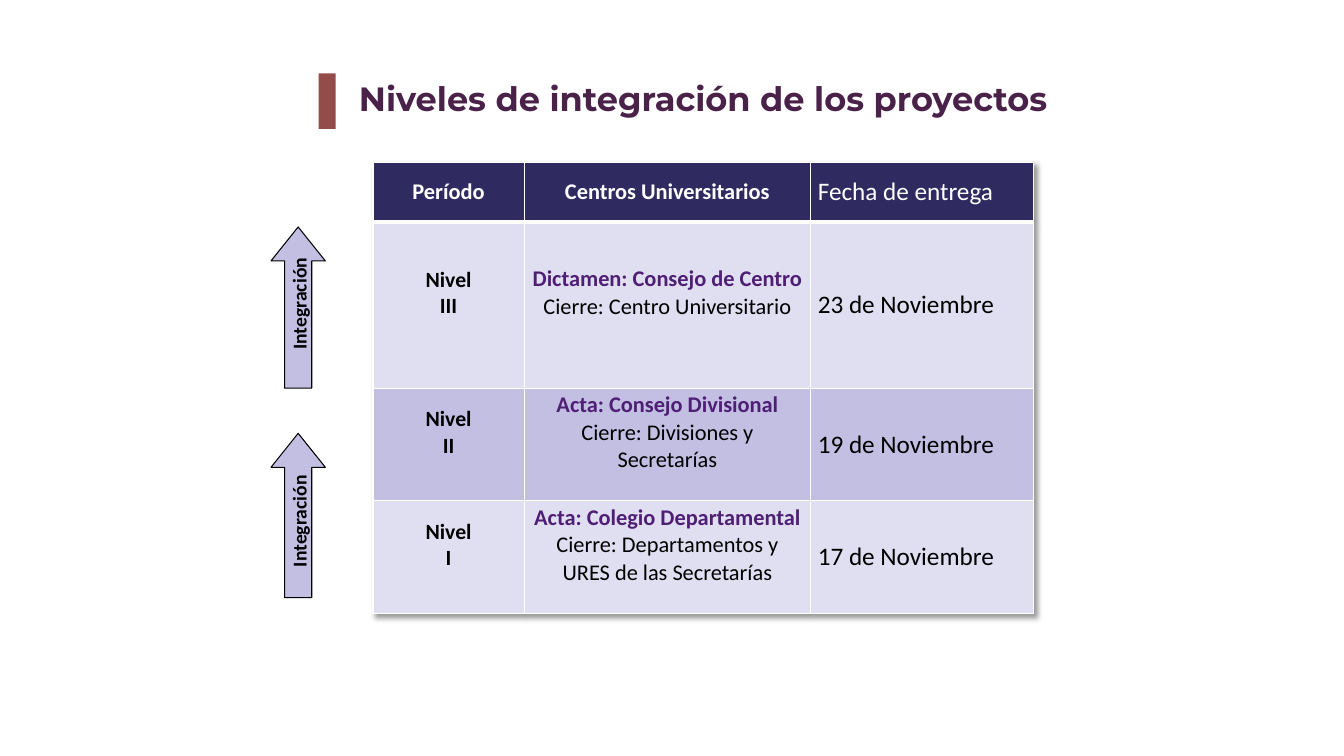
"""Builds the slide on the integration levels of the projects."""
import lxml.etree
import pptx
import pptx.dml.color
import pptx.enum.shapes
import pptx.enum.text
import pptx.oxml
import pptx.oxml.ns
import pptx.util

Cm = pptx.util.Cm
Pt = pptx.util.Pt
RGBColor = pptx.dml.color.RGBColor
PP_ALIGN = pptx.enum.text.PP_ALIGN
MSO_ANCHOR = pptx.enum.text.MSO_ANCHOR
MSO_SHAPE = pptx.enum.shapes.MSO_SHAPE

PLUM = RGBColor(0x4A, 0x22, 0x49)
BRICK = RGBColor(0x93, 0x4C, 0x49)
NAVY = RGBColor(0x2F, 0x2B, 0x60)
LAVENDER = RGBColor(0xC2, 0xBF, 0xE3)
PALE = RGBColor(0xE0, 0xDF, 0xF1)
PURPLE = RGBColor(0x4F, 0x1F, 0x76)
BLACK = RGBColor(0, 0, 0)
WHITE = RGBColor(0xFF, 0xFF, 0xFF)


def set_font(paragraph, size, color, bold, name="Calibri"):
    font = paragraph.font
    font.name, font.size, font.bold = name, Pt(size), bold
    font.color.rgb = color


def add_border(cell, side, width):
    line = lxml.etree.SubElement(
        cell._tc.get_or_add_tcPr(), pptx.oxml.ns.qn(f"a:{side}"), w=str(Pt(width)))
    fill = lxml.etree.SubElement(line, pptx.oxml.ns.qn("a:solidFill"))
    lxml.etree.SubElement(fill, pptx.oxml.ns.qn("a:srgbClr"), val=str(WHITE))


deck = pptx.Presentation()
deck.slide_width, deck.slide_height = Cm(33.87), Cm(19.05)
slide = deck.slides.add_slide(deck.slide_layouts[5])

title = slide.shapes.title
title.left, title.top, title.width, title.height = Cm(8.79), Cm(1.83), Cm(21.79), Cm(1.27)
title.text_frame.text = "Niveles de integración de los proyectos"
title.text_frame.vertical_anchor = MSO_ANCHOR.TOP
title.text_frame.paragraphs[0].alignment = PP_ALIGN.JUSTIFY
set_font(title.text_frame.paragraphs[0], 24, PLUM, True, "Montserrat")

for arrow_top, arrow_height, label_middle in [(10.92, 4.14, 12.62), (5.72, 4.06, 7.14)]:
    step = slide.shapes.add_group_shape()
    arrow = step.shapes.add_shape(
        MSO_SHAPE.UP_ARROW, Cm(6.83), Cm(arrow_top), Cm(1.37), Cm(arrow_height))
    arrow.adjustments[0], arrow.adjustments[1] = 0.5, 0.625
    arrow.shadow.inherit = False
    arrow.fill.solid()
    arrow.fill.fore_color.rgb = LAVENDER
    arrow.line.color.rgb = BLACK
    arrow.line.width = Pt(0.75)
    label = step.shapes.add_textbox(
        Cm(5.55), Cm(label_middle - 0.36), Cm(3.84), Cm(0.72))
    label.rotation = 270
    label.text_frame.word_wrap = True
    label.text_frame.text = "Integración"
    set_font(label.text_frame.paragraphs[0], 14, BLACK, True)

levels = [
    ("III", "Dictamen: Consejo de Centro", "Cierre: Centro Universitario", "23 de Noviembre"),
    ("II", "Acta: Consejo Divisional", "Cierre: Divisiones y Secretarías", "19 de Noviembre"),
    ("I", "Acta: Colegio Departamental", "Cierre: Departamentos y URES de las Secretarías",
     "17 de Noviembre"),
]
rows = [[[("Período", 16, WHITE, True)],
         [("Centros Universitarios", 16, WHITE, True)],
         [("Fecha de entrega", 18, WHITE, False)]]]
for level, approval, closing, due in levels:
    rows.append([[("Nivel", 15.5, BLACK, True), (level, 15.5, BLACK, True)],
                 [(approval, 16, PURPLE, True), (closing, 16, BLACK, False)],
                 [(due, 18, BLACK, False)]])

schedule = slide.shapes.add_table(4, 3, Cm(9.4), Cm(4.09), Cm(16.64), Cm(11.38)).table
for column, width in zip(schedule.columns, [3.81, 7.22, 5.61]):
    column.width = Cm(width)
for row, height in zip(schedule.rows, [1.5, 4.19, 2.84, 2.84]):
    row.height = Cm(height)

for row_index, row in enumerate(rows):
    for column_index, lines in enumerate(row):
        cell = schedule.cell(row_index, column_index)
        for side in ("lnL", "lnR", "lnT", "lnB"):
            heavy = (row_index, side) in [(0, "lnB"), (1, "lnT")]
            add_border(cell, side, 3 if heavy else 1)
        cell.fill.solid()
        cell.fill.fore_color.rgb = [NAVY, PALE, LAVENDER, PALE][row_index]
        cell.vertical_anchor = MSO_ANCHOR.MIDDLE
        cell.margin_left = cell.margin_right = Cm(0.18)
        cell.margin_top = Cm(0.08)
        cell.margin_bottom = Cm(0.69 if len(lines) == 2 else 0.08)
        cell.text_frame.text = "\n".join(line[0] for line in lines)
        for paragraph, (_, size, color, bold) in zip(cell.text_frame.paragraphs, lines):
            paragraph.alignment = PP_ALIGN.LEFT if column_index == 2 else PP_ALIGN.CENTER
            set_font(paragraph, size, color, bold)

table_shadow = pptx.oxml.parse_xml(
    f'<a:effectLst {pptx.oxml.ns.nsdecls("a")}>'
    '<a:outerShdw blurRad="50800" dist="38100" dir="2700000" algn="tl" rotWithShape="0">'
    '<a:srgbClr val="000000"><a:alpha val="40000"/></a:srgbClr>'
    '</a:outerShdw></a:effectLst>')
schedule._tbl.tblPr.insert(0, table_shadow)

title_mark = slide.shapes.add_shape(
    MSO_SHAPE.RECTANGLE, Cm(8.03), Cm(1.85), Cm(0.43), Cm(1.4))
title_mark.shadow.inherit = False
title_mark.fill.solid()
title_mark.fill.fore_color.rgb = BRICK
title_mark.line.fill.background()

deck.save("out.pptx")
